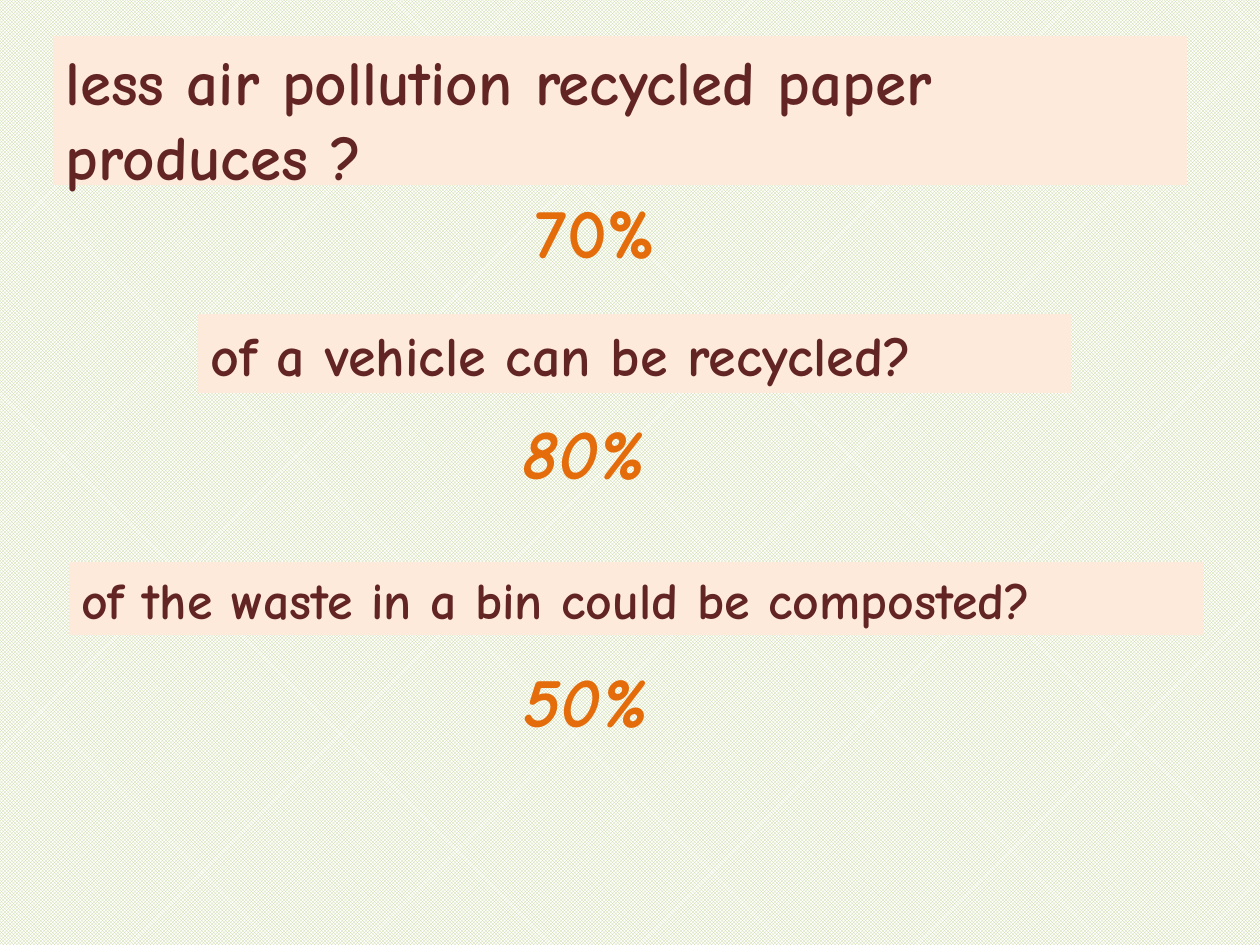
from lxml import etree
from pptx import Presentation
from pptx.dml.color import RGBColor
from pptx.enum.dml import MSO_PATTERN
from pptx.enum.shapes import MSO_SHAPE
from pptx.enum.text import MSO_ANCHOR, MSO_AUTO_SIZE, PP_ALIGN
from pptx.oxml.ns import qn
from pptx.util import Pt

PX = 914400 / 126
RECT = MSO_SHAPE.RECTANGLE
CHECK = MSO_PATTERN.SMALL_CHECKER_BOARD
TOP, MIDDLE = MSO_ANCHOR.TOP, MSO_ANCHOR.MIDDLE
LEFT, CENTER = PP_ALIGN.LEFT, PP_ALIGN.CENTER
GROW = MSO_AUTO_SIZE.SHAPE_TO_FIT_TEXT
FIXED = MSO_AUTO_SIZE.NONE

COLORS = {
    "check": "C3D69B",
    "base": "FFFFFF",
    "band": "FDEADA",
    "ask": "632523",
    "answer": "E46C0A",
}


def color(name):
    return RGBColor.from_string(COLORS[name])


class Quiz:
    """Holds the text style and the current slide."""

    font = "Comic Neue"

    def __init__(self, slide):
        self.slide = slide

    def ground(self):
        fill = self.slide.background.fill
        fill.patterned()
        fill.pattern = CHECK
        fill.fore_color.rgb = color("check")
        fill.back_color.rgb = color("base")

    def label(self, shape, text, size, tint, frame, italic=None, align=LEFT):
        for key, value in frame.items():
            setattr(shape.text_frame, key, value)
        para = shape.text_frame.paragraphs[0]
        para.alignment = align
        run = para.add_run()
        run.text = text
        style = {"name": self.font, "size": Pt(size), "bold": True, "italic": italic}
        for key, value in style.items():
            setattr(run.font, key, value)
        run.font.color.rgb = color(tint)
        return para

    def ask(self, box, text, size):
        shape = self.slide.shapes.add_shape(RECT, *(round(n * PX) for n in box))
        shape.shadow.inherit = False
        shape.fill.solid()
        shape.fill.fore_color.rgb = color("band")
        shape.line.fill.background()
        frame = {"word_wrap": True, "vertical_anchor": TOP}
        para = self.label(shape, text, size, "ask", frame)
        # Space before the line is 20% of its height
        space = etree.SubElement(para._p.get_or_add_pPr(), qn("a:spcBef"))
        etree.SubElement(space, qn("a:spcPct"), val="20000")

    def answer(self, box, text, wrap=True, anchor=TOP, fit=GROW, **style):
        shape = self.slide.shapes.add_textbox(*(round(n * PX) for n in box))
        frame = {"word_wrap": wrap, "vertical_anchor": anchor, "auto_size": fit}
        self.label(shape, text, 40, "answer", frame, **style)


def main():
    deck = Presentation()
    deck.slide_width = round(1260 * PX)
    deck.slide_height = round(945 * PX)
    quiz = Quiz(deck.slides.add_slide(deck.slide_layouts[6]))
    quiz.ground()

    # Paper
    quiz.answer((291, 175, 609, 110), "70%", anchor=MIDDLE, fit=FIXED, align=CENTER)
    quiz.ask((53, 36, 1134, 149), "less air pollution recycled paper produces ?", 36)

    # Vehicles
    quiz.ask((198, 314, 873, 79), "of a vehicle can be recycled?", 32)
    quiz.answer((510, 403, 228, 97), "80%", italic=True)

    # Compost
    quiz.ask((69, 562, 1134, 73), "of the waste in a bin could be composted?", 29.6)
    quiz.answer((510, 651, 170, 97), "50%", wrap=False, italic=True)

    deck.save("out.pptx")


if __name__ == "__main__":
    main()
